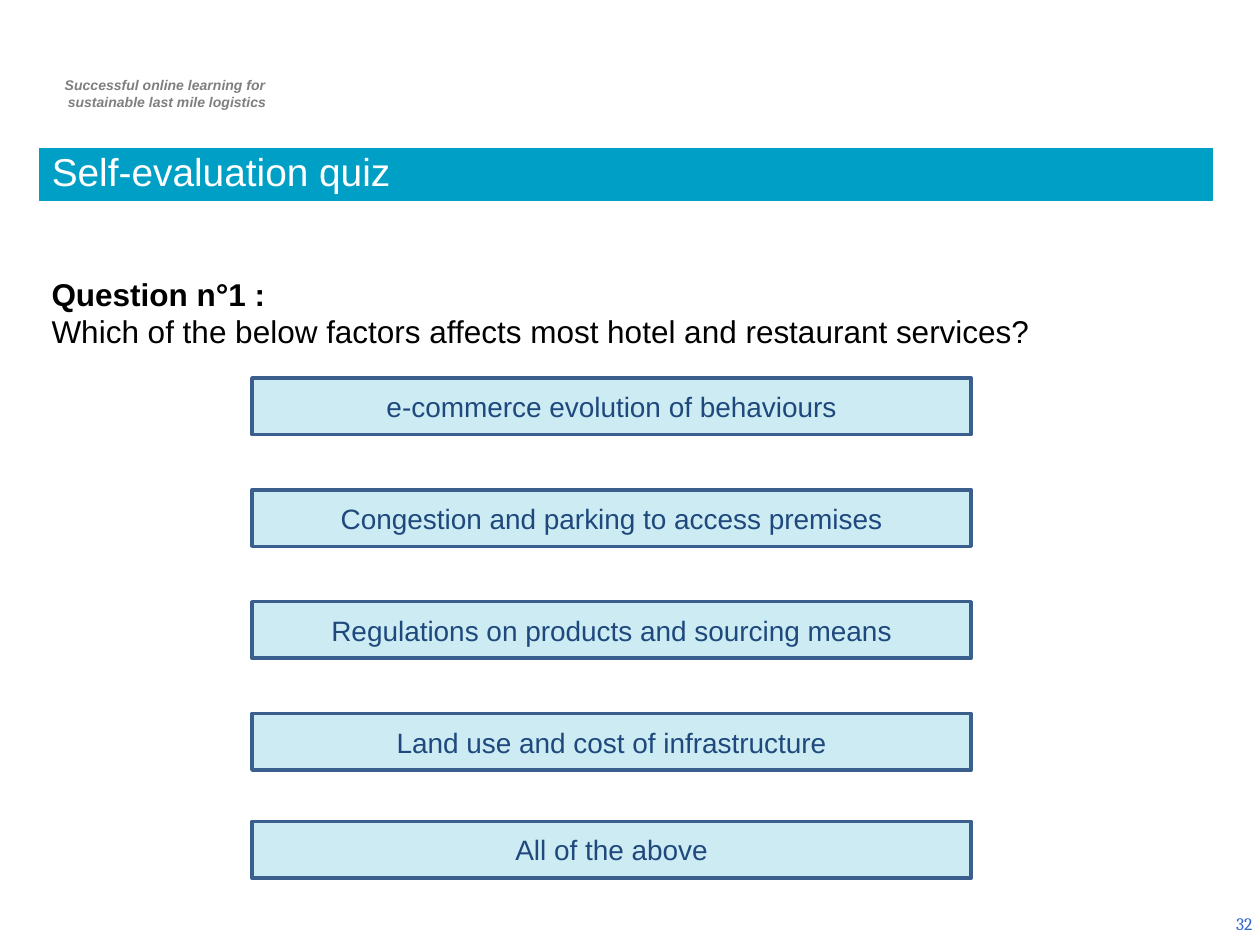
from lxml import etree
from pptx import Presentation
from pptx.dml.color import RGBColor
from pptx.enum.shapes import MSO_SHAPE
from pptx.enum.text import MSO_ANCHOR, MSO_AUTO_SIZE, PP_ALIGN
from pptx.oxml.ns import qn
from pptx.util import Cm, Pt

RECTANGLE = MSO_SHAPE.RECTANGLE
TOP, MIDDLE, BOTTOM = MSO_ANCHOR.TOP, MSO_ANCHOR.MIDDLE, MSO_ANCHOR.BOTTOM
LEFT, CENTER, RIGHT = PP_ALIGN.LEFT, PP_ALIGN.CENTER, PP_ALIGN.RIGHT
NO_AUTOFIT = MSO_AUTO_SIZE.NONE

WHITE = RGBColor(0xFF, 0xFF, 0xFF)
BLACK = RGBColor(0, 0, 0)
GREY = RGBColor(0x7F, 0x7F, 0x7F)
TEAL = RGBColor(0x00, 0x9F, 0xC6)
NAVY = RGBColor(0x1F, 0x49, 0x7D)
OUTLINE = RGBColor(0x3A, 0x5F, 0x8C)
PAGE_BLUE = RGBColor(0x33, 0x66, 0xCC)

ANSWERS = [
    "e-commerce evolution of behaviours",
    "Congestion and parking to access premises",
    "Regulations on products and sourcing means",
    "Land use and cost of infrastructure",
]
LAST_ANSWER = "All of the above"


def add_run(paragraph, text, size, color, bold=False, italic=False, font="Arial"):
    run = paragraph.add_run()
    run.text = text
    run.font.name = font
    run.font.size = Pt(size)
    run.font.color.rgb = color
    run.font.bold = bold
    run.font.italic = italic


def prepare_text(shape, anchor, alignment):
    frame = shape.text_frame
    frame.word_wrap = True
    frame.auto_size = NO_AUTOFIT
    frame.vertical_anchor = anchor
    frame.paragraphs[0].alignment = alignment
    return frame


def add_text_box(slide, box, anchor, alignment):
    shape = slide.shapes.add_textbox(*map(Cm, box))
    return prepare_text(shape, anchor, alignment)


def add_project_tagline(slide, box):
    frame = add_text_box(slide, box, TOP, CENTER)
    first = frame.paragraphs[0]
    second = frame.add_paragraph()
    second.alignment = CENTER
    lines = ["Successful online learning for ", "sustainable last mile logistics"]
    for paragraph, line in zip((first, second), lines):
        paragraph._p.get_or_add_pPr().set("marL", str(Cm(0.1)))
        add_run(paragraph, line, 8, GREY, bold=True, italic=True)


def add_title_bar(slide, box):
    title = slide.shapes.title
    title.left, title.top, title.width, title.height = map(Cm, box)
    title.fill.solid()
    title.fill.fore_color.rgb = TEAL
    title.line.color.rgb = TEAL
    title.line.width = Pt(0.75)
    paragraph = prepare_text(title, BOTTOM, LEFT).paragraphs[0]
    paragraph.line_spacing = 0.8
    add_run(paragraph, "Self-evaluation quiz", 22.2, WHITE)


def add_question(slide, box):
    frame = add_text_box(slide, box, TOP, LEFT)
    add_run(frame.paragraphs[0], "Question n°1 :", 18, BLACK, bold=True)
    question = "Which of the below factors affects most hotel and restaurant services?"
    add_run(frame.add_paragraph(), question, 18, BLACK)


def add_answer(slide, box, text):
    shape = slide.shapes.add_shape(RECTANGLE, *map(Cm, box))
    shape.shadow.inherit = False
    shape.fill.solid()
    shape.fill.fore_color.rgb = TEAL
    color = shape._element.spPr.find(qn("a:solidFill")).find(qn("a:srgbClr"))
    etree.SubElement(color, qn("a:alpha")).set("val", "20000")
    shape.line.color.rgb = OUTLINE
    shape.line.width = Pt(2)
    paragraph = prepare_text(shape, MIDDLE, CENTER).paragraphs[0]
    add_run(paragraph, text, 16, NAVY)


def add_answers(slide, box):
    left, top, width, height = box
    answer_height, pitch = 1.14, 2.255
    for index, answer in enumerate(ANSWERS):
        add_answer(slide, (left, top + index * pitch, width, answer_height), answer)
    last_top = top + height - answer_height
    add_answer(slide, (left, last_top, width, answer_height), LAST_ANSWER)


def add_page_number(slide, box):
    frame = add_text_box(slide, box, MIDDLE, RIGHT)
    add_run(frame.paragraphs[0], "32", 10, PAGE_BLUE, font="Cambria")


def main():
    presentation = Presentation()
    presentation.slide_width = Cm(25.4)
    presentation.slide_height = Cm(19.05)
    slide = presentation.slides.add_slide(presentation.slide_layouts[5])
    add_project_tagline(slide, (0.74, 1.42, 5.16, 0.94))
    add_page_number(slide, (19.58, 18.11, 5.92, 1.02))
    add_title_bar(slide, (0.79, 3, 23.65, 1.04))
    add_question(slide, (0.79, 5.41, 23.65, 1.8))
    add_answers(slide, (5.08, 7.62, 14.5, 10.08))
    presentation.save("out.pptx")


if __name__ == "__main__":
    main()
